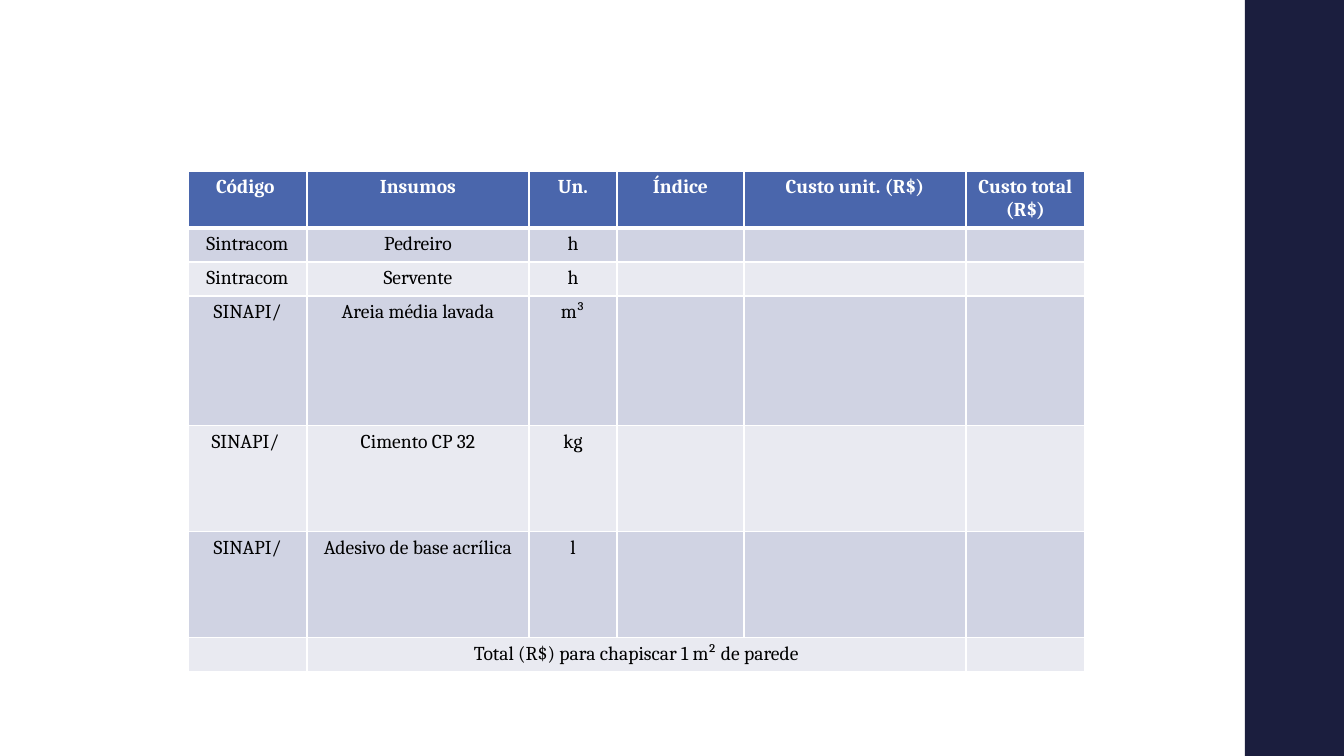
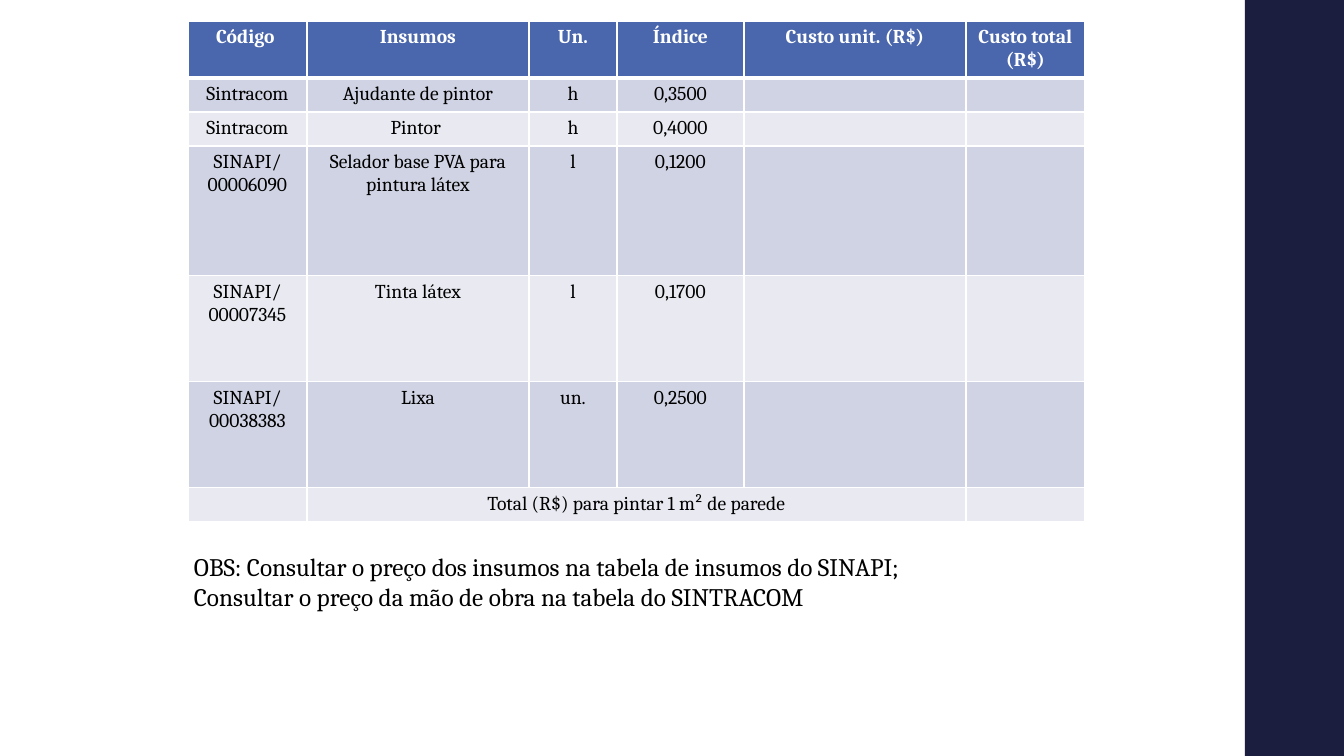
from dataclasses import dataclass

from lxml.etree import SubElement
from pptx import Presentation
from pptx.dml.color import RGBColor
from pptx.enum.shapes import MSO_SHAPE as Shape
from pptx.enum.text import MSO_AUTO_SIZE as AutoSize, PP_ALIGN as Align
from pptx.oxml import parse_xml
from pptx.oxml.ns import nsdecls, qn
from pptx.util import Emu, Pt

PX_PER_INCH = 100.8
WIDTH, HEIGHT = 1344, 756
BAND_LEFT = 1245
TABLE_LEFT = 188
COLS = (119, 222, 88, 127, 222, 119)
ROWS = (57, 32, 33, 130, 106, 106, 33)
FONT = "Cambria"
CELL_SIZE, NOTE_SIZE = 14, 18
NAVY, BLUE, WHITE, BLACK = "1B1E3E", "4A66AC", "FFFFFF", "000000"
BANDS = ("E9EAF1", "D0D3E3")
HEADER = ("Código ", "Insumos", "Un.", "Índice", "Custo unit. (R$)", "Custo total (R$)")


@dataclass
class Item:
    code: str
    name: str
    unit: str
    index: str = ""


@dataclass
class CostTable:
    top: int
    items: list[Item]
    total: str
    notes: tuple[str, ...] = ()


TABLES = [
    CostTable(
        171,
        [
            Item("Sintracom", "Pedreiro", "h"),
            Item("Sintracom", "Servente", "h"),
            Item("SINAPI/", "Areia média lavada", "m³"),
            Item("SINAPI/ ", "Cimento CP 32", "kg"),
            Item("SINAPI/", "Adesivo de base acrílica", "l"),
        ],
        "Total (R$) para chapiscar 1 m² de parede",
    ),
    CostTable(
        21,
        [
            Item("Sintracom", "Ajudante de pintor", "h", "0,3500"),
            Item("Sintracom", "Pintor ", "h", "0,4000"),
            Item("SINAPI/ 00006090", "Selador base PVA para pintura látex", "l", "0,1200"),
            Item("SINAPI/ 00007345", "Tinta látex", "l", "0,1700"),
            Item("SINAPI/ 00038383", "Lixa", "un.", "0,2500"),
        ],
        "Total (R$) para pintar 1 m² de parede",
        (
            "OBS: Consultar o preço dos insumos na tabela de insumos do SINAPI;",
            "Consultar o preço da mão de obra na tabela do SINTRACOM",
        ),
    ),
]


def px(n: int) -> Emu:
    return Emu(round(n * 914400 / PX_PER_INCH))


def rgb(value: str) -> RGBColor:
    return RGBColor.from_string(value)


def add_text(p, text: str, size: int, color: str, bold: bool = False) -> None:
    r = p.add_run()
    r.text = text
    r.font.name = FONT
    r.font.size = Pt(size)
    r.font.bold = bold
    r.font.color.rgb = rgb(color)


def set_borders(cell, top: int, bottom: int) -> None:
    tc_pr = cell._tc.get_or_add_tcPr()
    sides = (("L", 1), ("R", 1), ("T", top), ("B", bottom))
    for i, (side, width) in enumerate(sides):
        tc_pr.insert(i, parse_xml(
            f'<a:ln{side} {nsdecls("a")} w="{Pt(width)}"><a:solidFill>'
            f'<a:srgbClr val="{WHITE}"/></a:solidFill></a:ln{side}>'
        ))


def fill_cell(cell, text: str, row: int) -> None:
    header = row == 0
    cell.fill.solid()
    cell.fill.fore_color.rgb = rgb(BLUE if header else BANDS[row % 2])
    set_borders(cell, 3 if row == 1 else 1, 3 if header else 1)
    p = cell.text_frame.paragraphs[0]
    p.alignment = Align.CENTER
    if text:
        add_text(p, text, CELL_SIZE, WHITE if header else BLACK, header)
    else:
        SubElement(p._p, qn("a:endParaRPr")).set("sz", str(CELL_SIZE * 100))


def add_cost_table(slide, data: CostTable) -> None:
    frame = slide.shapes.add_table(
        len(ROWS), len(COLS), px(TABLE_LEFT), px(data.top), px(sum(COLS)), px(sum(ROWS))
    )
    table = frame.table
    table.first_row = table.horz_banding = False
    for col, width in zip(table.columns, COLS):
        col.width = px(width)
    for row, height in zip(table.rows, ROWS):
        row.height = px(height)
    body = [(it.code, it.name, it.unit, it.index, "", "") for it in data.items]
    grid = [HEADER, *body, ("", data.total, "", "", "", "")]
    for i, texts in enumerate(grid):
        for j, text in enumerate(texts):
            fill_cell(table.cell(i, j), text, i)
    last = len(ROWS) - 1
    table.cell(last, 1).merge(table.cell(last, 4))


def add_notes(slide, lines: tuple[str, ...]) -> None:
    tf = slide.shapes.add_textbox(px(184), px(546), px(1004), px(72)).text_frame
    tf.word_wrap = True
    tf.auto_size = AutoSize.SHAPE_TO_FIT_TEXT
    for i, line in enumerate(lines):
        p = tf.add_paragraph() if i else tf.paragraphs[0]
        add_text(p, line, NOTE_SIZE, BLACK)


def add_master_band(prs, slide) -> None:
    sp = slide.shapes.add_shape(
        Shape.RECTANGLE, px(BAND_LEFT), 0, px(WIDTH - BAND_LEFT), px(HEIGHT)
    )
    sp.shadow.inherit = False
    sp.fill.solid()
    sp.fill.fore_color.rgb = rgb(NAVY)
    sp.line.fill.background()
    prs.slide_master.shapes.element.append(sp.element)


def main() -> None:
    prs = Presentation()
    prs.slide_width, prs.slide_height = px(WIDTH), px(HEIGHT)
    slides = [prs.slides.add_slide(prs.slide_layouts[6]) for _ in TABLES]
    add_master_band(prs, slides[0])
    for slide, data in zip(slides, TABLES):
        add_cost_table(slide, data)
        if data.notes:
            add_notes(slide, data.notes)
    prs.save("out.pptx")


if __name__ == "__main__":
    main()
